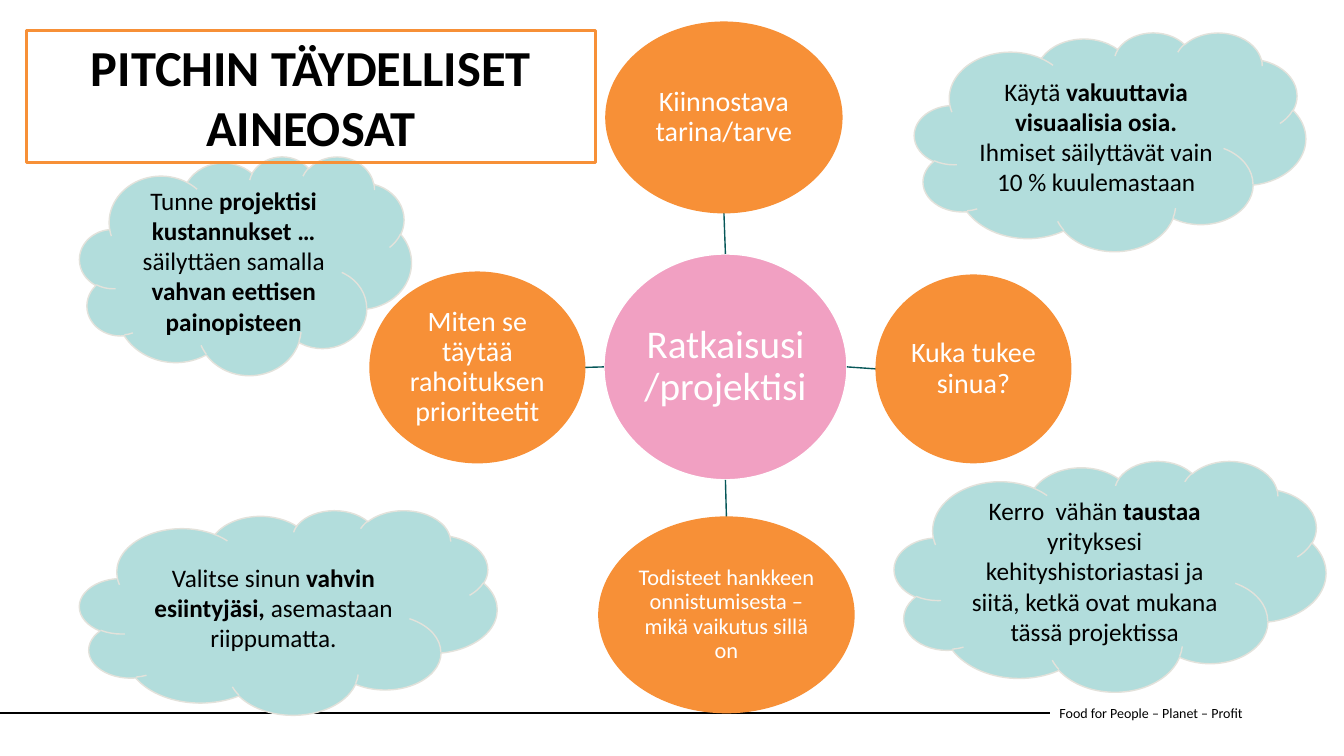
from lxml import etree
from pptx import Presentation
from pptx.dml.color import RGBColor
from pptx.enum.shapes import MSO_CONNECTOR, MSO_SHAPE
from pptx.enum.text import MSO_ANCHOR, MSO_AUTO_SIZE, PP_ALIGN
from pptx.oxml.ns import qn
from pptx.util import Pt

STRAIGHT = MSO_CONNECTOR.STRAIGHT
OVAL, CLOUD = MSO_SHAPE.OVAL, MSO_SHAPE.CLOUD
MIDDLE = MSO_ANCHOR.MIDDLE
GROW = MSO_AUTO_SIZE.SHAPE_TO_FIT_TEXT
LEFT, CENTER = PP_ALIGN.LEFT, PP_ALIGN.CENTER

EMU_PER_PX = 9144  # 100 px to the inch
FONT = "Calibri"
COLORS = {
    "orange": "F79037", "pink": "F1A0C2", "mint": "B2DDDC", "sand": "E3E2DB",
    "teal": "065758", "black": "000000", "white": "FFFFFF",
}

# Boxes are left, top, width, height
HUB = ("Ratkaisusi/projektisi", (599, 252, 241, 224))
INGREDIENTS = {
    "top": ("Kiinnostava tarina/tarve", (601, 22, 234, 189), 20),
    "right": ("Kuka tukee sinua?", (869, 273, 193, 186), 20),
    "bottom": ("Todisteet hankkeen onnistumisesta – mikä vaikutus sillä on",
               (594, 513, 253, 194), 16),
    "left": ("Miten se täytää rahoituksen prioriteetit", (367, 270, 213, 189), 20),
}
OPPOSITE = {"top": "bottom", "bottom": "top", "left": "right", "right": "left"}

# Runs alternate between plain and bold
TIPS = [
    (["Käytä ", "vakuuttavia visuaalisia osia. ",
      "Ihmiset säilyttävät vain 10 % kuulemastaan"], (907, 32, 388, 217)),
    (["Kerro  vähän ", "taustaa ",
      "yrityksesi kehityshistoriastasi ja siitä, ketkä ovat mukana tässä projektissa"],
     (887, 457, 428, 229)),
    (["Valitse sinun ", "vahvin esiintyjäsi, ", "asemastaan riippumatta."],
     (79, 506, 414, 203)),
    (["Tunne ", "projektisi kustannukset … ", "säilyttäen samalla ",
      "vahvan eettisen painopisteen"], (79, 155, 329, 217)),
]


def px(value):
    return round(value * EMU_PER_PX)


def rgb(name):
    return RGBColor.from_string(COLORS[name])


def write_text(shape, runs, size, color="black", bold=False, align=CENTER,
               line_spacing=1.0, inset=None):
    frame = shape.text_frame
    frame.word_wrap = True
    frame.vertical_anchor = MIDDLE
    if inset is not None:
        frame.margin_left = frame.margin_right = px(inset)
        frame.margin_top = frame.margin_bottom = px(inset)
    paragraph = frame.paragraphs[0]
    paragraph.alignment = align
    paragraph.line_spacing = line_spacing
    for index, text in enumerate(runs):
        run = paragraph.add_run()
        run.text = text
        run.font.name = FONT
        run.font.size = Pt(size)
        run.font.bold = bold or index % 2 == 1
        run.font.color.rgb = rgb(color)


def add_filled_shape(slide, kind, box, fill, line):
    shape = slide.shapes.add_shape(kind, *map(px, box))
    shape.shadow.inherit = False
    shape.fill.solid()
    shape.fill.fore_color.rgb = rgb(fill)
    shape.line.color.rgb = rgb(line)
    shape.line.width = Pt(1)
    return shape


def add_line(slide, start, end, color, width):
    connector = slide.shapes.add_connector(STRAIGHT, *map(px, start + end))
    connector.line.color.rgb = rgb(color)
    connector.line.width = Pt(width)
    properties = connector.element.find(qn("p:spPr"))
    etree.SubElement(properties, qn("a:effectLst"))


def edge_point(box, side):
    left, top, width, height = box
    return {
        "top": (left + width / 2, top),
        "bottom": (left + width / 2, top + height),
        "left": (left, top + height / 2),
        "right": (left + width, top + height / 2),
    }[side]


def add_title(slide, text, box):
    title = slide.shapes.title
    title.left, title.top, title.width, title.height = map(px, box)
    title.line.color.rgb = rgb("orange")
    title.line.width = Pt(2.25)
    write_text(title, [text], 36, bold=True)
    title.text_frame.auto_size = GROW
    slide.shapes.element.append(title.element)  # in front of the clouds


def add_footer(slide):
    add_line(slide, (0, 707), (1041, 707), "black", 1.5)
    footer = slide.shapes.add_textbox(*map(px, (1041, 687, 273, 40)))
    write_text(footer, ["Food for People – Planet – Profit"], 10, align=LEFT)


def add_wheel(slide):
    hub_text, hub_box = HUB
    hub = add_filled_shape(slide, OVAL, hub_box, "pink", "white")
    write_text(hub, [hub_text], 28, "white", line_spacing=0.9, inset=2)
    for side, (text, box, size) in INGREDIENTS.items():
        add_line(slide, edge_point(hub_box, side),
                 edge_point(box, OPPOSITE[side]), "teal", 1)
        circle = add_filled_shape(slide, OVAL, box, "orange", "orange")
        write_text(circle, [text], size, "white", line_spacing=0.9, inset=1)


def main():
    presentation = Presentation()
    presentation.slide_width, presentation.slide_height = px(1333), px(750)
    slide = presentation.slides.add_slide(presentation.slide_layouts[5])

    # Footer rule and tagline
    add_footer(slide)
    # Hub with its four ingredients
    add_wheel(slide)
    # Tip clouds
    for runs, box in TIPS:
        cloud = add_filled_shape(slide, CLOUD, box, "mint", "sand")
        write_text(cloud, runs, 18)
    # Framed title
    add_title(slide, "PITCHIN TÄYDELLISET AINEOSAT", (26, 30, 565, 131))

    presentation.save("out.pptx")


if __name__ == "__main__":
    main()
